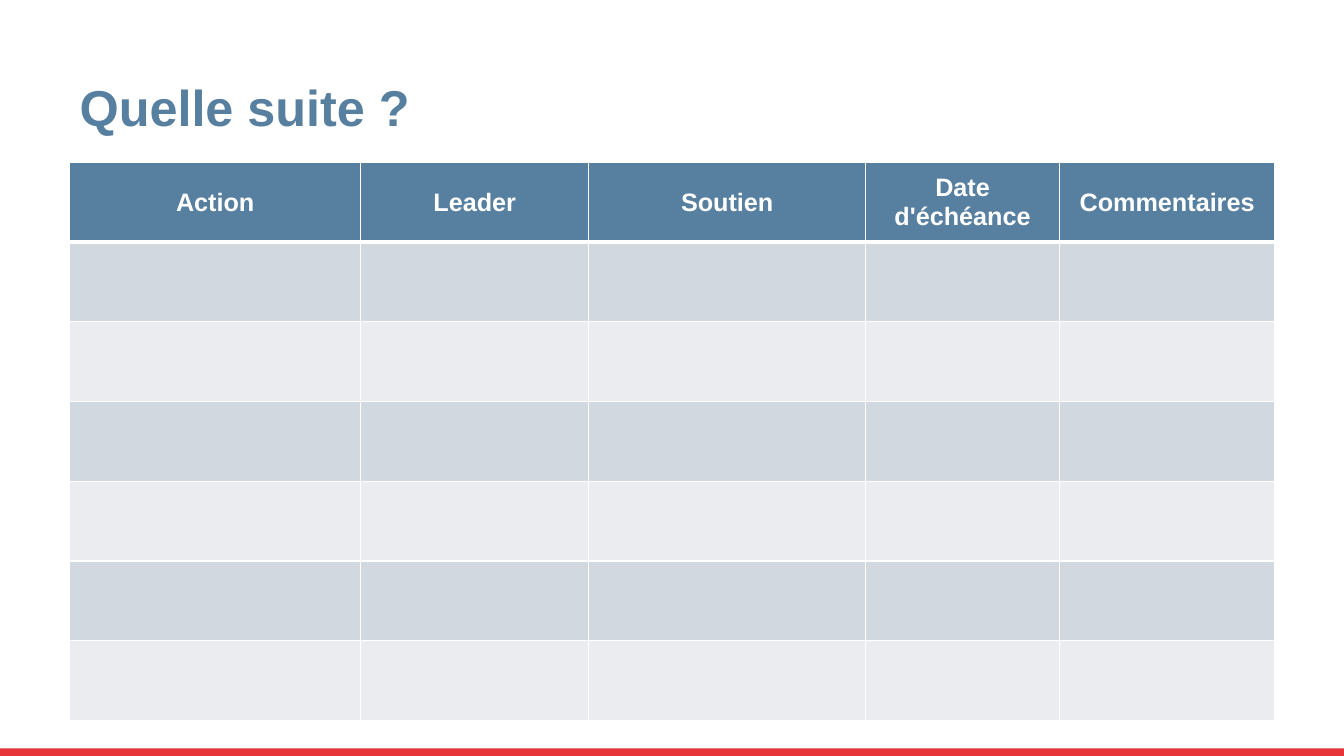
from pptx import Presentation
from pptx.dml.color import RGBColor
from pptx.enum.shapes import MSO_SHAPE as Shape
from pptx.enum.text import MSO_ANCHOR as Anchor, MSO_AUTO_SIZE as AutoSize, PP_ALIGN as Align
from pptx.oxml.ns import qn
from pptx.util import Pt
from lxml.etree import SubElement

WIDTH, HEIGHT = 960, 540
LEFT = 49.68
HEADINGS = ["Action", "Leader", "Soutien", "Date d'échéance", "Commentaires"]
COLUMN_WIDTHS = [208.08, 162.72, 198, 138.24, 154.08]
ROW_COUNT, ROW_HEIGHT = 7, 56.95


def color(hex_code):
    return RGBColor.from_string(hex_code)


def apply(target, formats):
    """Set each attribute of target named in the formats dict."""
    for name, value in formats.items():
        setattr(target, name, value)


class ActionSlide:
    BLUE, RED, WHITE = "577F9F", "E73439", "FFFFFF"
    BANDS = ["D1D8DF", "EAECF0"]
    FONT = "Arial"

    def __init__(self, deck):
        self.page = deck.slides.add_slide(deck.slide_layouts[5])

    def add_text(self, frame, text, size, hex_code, align):
        para = frame.paragraphs[0]
        para.alignment = align
        span = para.add_run()
        span.text = text
        apply(span.font, {"name": self.FONT, "size": Pt(size), "bold": True})
        span.font.color.rgb = color(hex_code)
        return para

    def bar(self, left, top, width, height):
        box = self.page.shapes.add_shape(
            Shape.RECTANGLE, Pt(left), Pt(top), Pt(width), Pt(height))
        box.shadow.inherit = False
        box.fill.solid()
        box.fill.fore_color.rgb = color(self.RED)
        box.line.fill.background()

    def title(self, text, left, top, width, height):
        box = self.page.shapes.title
        apply(box, {"left": Pt(left), "top": Pt(top),
                    "width": Pt(width), "height": Pt(height)})
        apply(box.text_frame, {"vertical_anchor": Anchor.MIDDLE, "word_wrap": True,
                               "auto_size": AutoSize.NONE})
        para = self.add_text(box.text_frame, text, 36, self.BLUE, Align.LEFT)
        para.line_spacing = 0.9

    def border(self, cell, side, weight):
        line = SubElement(cell._tc.get_or_add_tcPr(), qn(f"a:ln{side}"), w=str(Pt(weight)))
        fill = SubElement(line, qn("a:solidFill"))
        SubElement(fill, qn("a:srgbClr"), val=self.WHITE)

    def cell(self, cell, hex_code, top, bottom):
        """Fill a cell and draw its borders, with the given top and bottom weights."""
        for side, weight in {"L": 1, "R": 1, "T": top, "B": bottom}.items():
            self.border(cell, side, weight)
        cell.fill.solid()
        cell.fill.fore_color.rgb = color(hex_code)

    def table(self, left, top):
        table = self.page.shapes.add_table(
            ROW_COUNT, len(HEADINGS), Pt(left), Pt(top),
            Pt(sum(COLUMN_WIDTHS)), Pt(ROW_COUNT * ROW_HEIGHT)).table
        for column, width in zip(table.columns, COLUMN_WIDTHS):
            column.width = Pt(width)
        for index, row in enumerate(table.rows):
            row.height = Pt(ROW_HEIGHT)
            fill = self.BANDS[(index - 1) % 2] if index else self.BLUE
            for cell in row.cells:
                self.cell(cell, fill, 3 if index == 1 else 1, 3 if index == 0 else 1)
        for cell, heading in zip(table.rows[0].cells, HEADINGS):
            cell.vertical_anchor = Anchor.MIDDLE
            self.add_text(cell.text_frame, heading, 18, self.WHITE, Align.CENTER)


def main():
    deck = Presentation()
    apply(deck, {"slide_width": Pt(WIDTH), "slide_height": Pt(HEIGHT)})
    slide = ActionSlide(deck)
    slide.bar(0, 534.6, WIDTH, 5.4)
    slide.title("Quelle suite ?", LEFT, 46.8, 828, 63.36)
    slide.table(LEFT, 116)
    deck.save("out.pptx")


if __name__ == "__main__":
    main()
